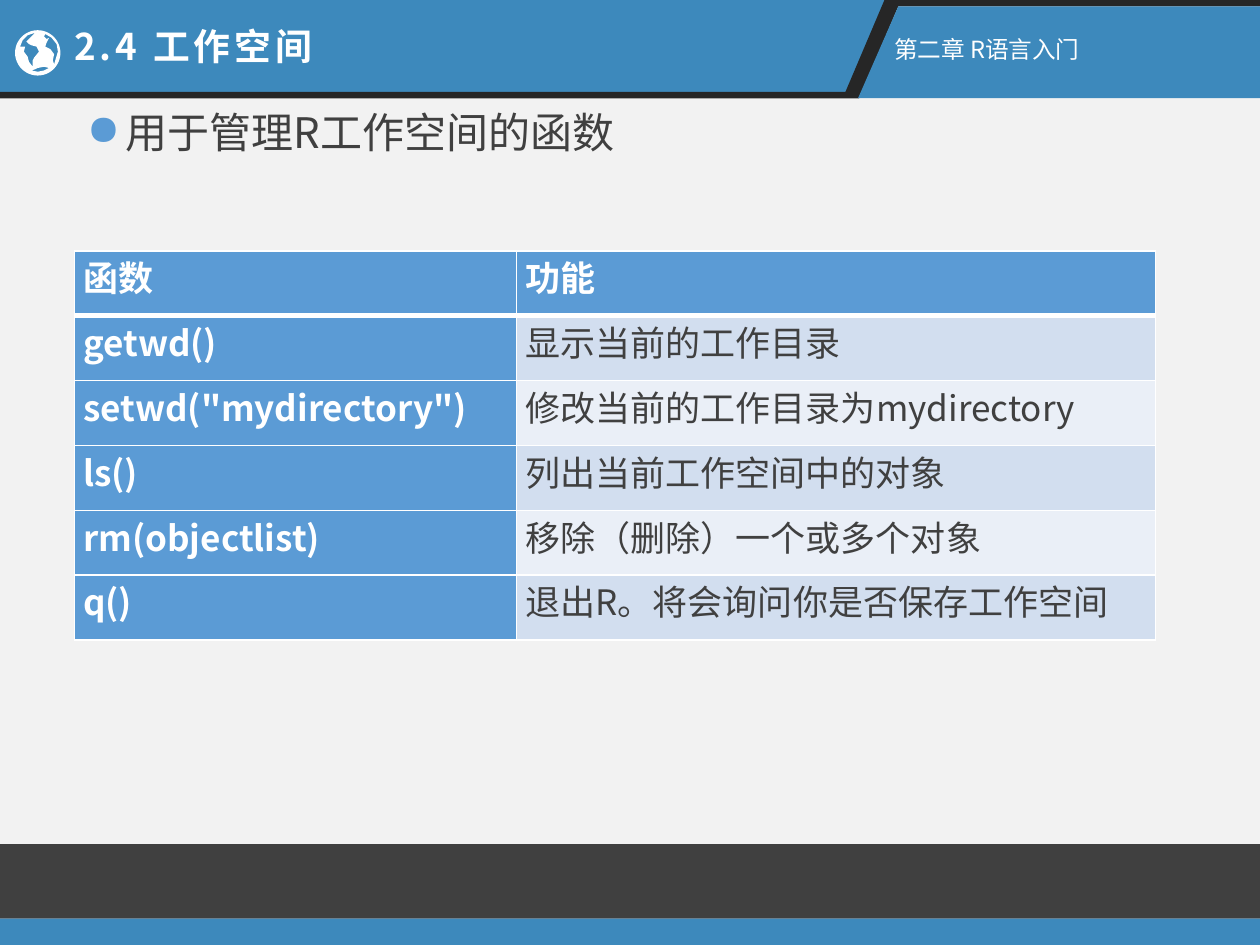
from dataclasses import dataclass
from math import cos, pi, sin

from lxml import etree
from pptx import Presentation
from pptx.dml.color import RGBColor
from pptx.enum.shapes import MSO_SHAPE
from pptx.enum.text import PP_ALIGN
from pptx.oxml.ns import qn
from pptx.util import Inches, Pt

RECTANGLE = MSO_SHAPE.RECTANGLE
JUSTIFY = PP_ALIGN.JUSTIFY


@dataclass(frozen=True)
class Theme:
    font: str = "Noto Sans CJK SC"
    page: str = "F2F2F2"
    banner: str = "3D89BC"
    edge: str = "262626"
    ink: str = "404040"
    white: str = "FFFFFF"
    accent: str = "5B9BD5"
    bands: tuple = ("D2DEEF", "EAEFF7")
    heading_size: float = 24
    title_size: float = 21
    table_size: float = 20
    chapter_size: float = 13.5
    leading: float = 0.85


THEME = Theme()

FUNCTIONS = [
    ("函数", "功能"),
    ("getwd()", "显示当前的工作目录"),
    ('setwd("mydirectory")', "修改当前的工作目录为mydirectory"),
    ("ls()", "列出当前工作空间中的对象"),
    ("rm(objectlist)", "移除（删除）一个或多个对象"),
    ("q()", "退出R。将会询问你是否保存工作空间"),
]

CONTINENTS = [
    [(0.34, 0.17), (0.31, 0.27), (0.3, 0.24), (0.31, 0.19), (0.28, 0.15),
     (0.24, 0.13), (0.25, 0.1), (0.27, 0.06), (0.25, 0.07), (0.23, 0.05),
     (0.24, 0.03), (0.29, 0.06), (0.33, 0.11)],
    [(0.16, 0.02), (0.14, 0.04), (0.12, 0.06), (0.09, 0.09), (0.11, 0.11),
     (0.13, 0.12), (0.17, 0.13), (0.19, 0.17), (0.15, 0.22), (0.14, 0.24),
     (0.14, 0.29), (0.11, 0.25), (0.1, 0.21), (0.07, 0.17), (0.08, 0.13),
     (0.04, 0.13), (0.06, 0.08), (0.1, 0.04)],
    [(0.13, 0.32), (0.16, 0.31), (0.18, 0.3), (0.23, 0.29), (0.27, 0.3),
     (0.23, 0.32), (0.18, 0.33)],
]


def rgb(color):
    return RGBColor.from_string(color)


def paint(shape, color):
    shape.shadow.inherit = False
    shape.fill.solid()
    shape.fill.fore_color.rgb = rgb(color)
    shape.line.fill.background()


def add_band(slide, left, top, width, height, color):
    band = slide.shapes.add_shape(
        RECTANGLE, Inches(left), Inches(top), Inches(width), Inches(height))
    paint(band, color)


def add_outline(slide, left, top, contours, color):
    def place(point):
        return Inches(left + point[0]), Inches(top + point[1])

    builder = slide.shapes.build_freeform(*place(contours[0][0]))
    for index, contour in enumerate(contours):
        if index:
            builder.move_to(*place(contour[0]))
        builder.add_line_segments([place(point) for point in contour[1:]])
    paint(builder.convert_to_shape(), color)


def style(paragraph, size, color, bold=False):
    font = paragraph.font
    font.size, font.bold, font.name = Pt(size), bold, THEME.font
    font.color.rgb = rgb(color)
    defaults = paragraph._p.pPr.find(qn("a:defRPr"))
    etree.SubElement(defaults, qn("a:ea"), typeface=THEME.font)
    return defaults


def add_label(slide, left, top, width, height, text, size, color,
              bold=False, wrap=True):
    frame = slide.shapes.add_textbox(
        Inches(left), Inches(top), Inches(width), Inches(height)).text_frame
    frame.word_wrap = wrap
    paragraph = frame.paragraphs[0]
    paragraph.text = text
    paragraph.line_spacing = THEME.leading
    return paragraph, style(paragraph, size, color, bold)


def add_globe(slide, left, top, diameter):
    radius = diameter / 2
    steps = 48
    rim = [(radius + radius * cos(2 * pi * step / steps),
            radius + radius * sin(2 * pi * step / steps))
           for step in range(steps)]
    add_outline(slide, left, top, [rim] + CONTINENTS, THEME.white)


def add_header(slide, left, top, width, height):
    rule = 0.05
    inner = height - rule
    add_outline(slide, left, top, [[
        (0, 0), (7.05, 0), (6.74, inner), (0, inner)]], THEME.banner)
    add_outline(slide, left, top, [[
        (7.02, 0), (width, 0), (width, rule), (7.13, rule), (6.82, height),
        (0, height), (0, inner), (6.71, inner)]], THEME.edge)
    add_outline(slide, left, top, [[
        (7.13, rule), (width, rule), (width, height), (6.81, height)]],
        THEME.banner)
    title, defaults = add_label(
        slide, left + 0.49, top + 0.19, 2.17, 0.45, "2.4 工作空间",
        THEME.title_size, THEME.white, bold=True, wrap=False)
    defaults.set("spc", "220")
    add_globe(slide, left + 0.12, top + 0.24, 0.36)
    add_label(slide, left + 7, top + 0.26, 1.71, 0.33, "第二章 R语言入门",
              THEME.chapter_size, THEME.white)


def add_heading(slide, left, top, width, height):
    heading, defaults = add_label(
        slide, left, top, width, height, "用于管理R工作空间的函数",
        THEME.heading_size, THEME.ink)
    properties = heading._p.pPr
    properties.set("marL", str(Inches(0.31)))
    properties.set("indent", str(-Inches(0.31)))
    bullet_color = etree.Element(qn("a:buClr"))
    etree.SubElement(bullet_color, qn("a:srgbClr"), val=THEME.accent)
    defaults.addprevious(bullet_color)
    defaults.addprevious(etree.Element(qn("a:buChar"), char="●"))


def add_borders(cell, bottom_weight):
    properties = cell._tc.get_or_add_tcPr()
    weights = {"a:lnL": 1, "a:lnR": 1, "a:lnT": 1, "a:lnB": bottom_weight}
    for index, (side, weight) in enumerate(weights.items()):
        border = etree.Element(qn(side), w=str(Pt(weight)))
        fill = etree.SubElement(border, qn("a:solidFill"))
        etree.SubElement(fill, qn("a:srgbClr"), val=THEME.white)
        properties.insert(index, border)


def add_function_table(slide, left, top, width, height):
    table = slide.shapes.add_table(
        len(FUNCTIONS), 2, Inches(left), Inches(top),
        Inches(width), Inches(height)).table
    table.horz_banding = False
    name_width = 3.51
    table.columns[0].width = Inches(name_width)
    table.columns[1].width = Inches(width - name_width)
    last = len(FUNCTIONS) - 1
    for row, texts in enumerate(FUNCTIONS):
        for column, text in enumerate(texts):
            cell = table.cell(row, column)
            strong = row == 0 or column == 0
            cell.margin_left = cell.margin_right = Inches(0.07)
            cell.margin_top = cell.margin_bottom = 0
            cell.fill.solid()
            cell.fill.fore_color.rgb = rgb(
                THEME.accent if strong else THEME.bands[(row - 1) % 2])
            add_borders(cell, 1 if row else 3)
            paragraph = cell.text_frame.paragraphs[0]
            paragraph.text = text
            if row == last:
                paragraph.alignment = JUSTIFY
            style(paragraph, THEME.table_size,
                  THEME.white if strong else THEME.ink, strong)


def add_footer(slide, left, top, width, height):
    stripe = 0.21
    add_band(slide, left, top, width, height - stripe, THEME.ink)
    add_band(slide, left, top + height - stripe, width, stripe, THEME.banner)


def main():
    deck = Presentation()
    deck.slide_width, deck.slide_height = Inches(10), Inches(7.5)
    slide = deck.slides.add_slide(deck.slide_layouts[6])
    slide.background.fill.solid()
    slide.background.fill.fore_color.rgb = rgb(THEME.page)
    add_footer(slide, 0, 6.7, 10, 0.8)
    add_heading(slide, 0.59, 0.86, 5.98, 0.5)
    add_function_table(slide, 0.59, 1.99, 8.58, 3.09)
    add_header(slide, 0, 0, 10, 0.78)
    deck.save("out.pptx")


if __name__ == "__main__":
    main()
